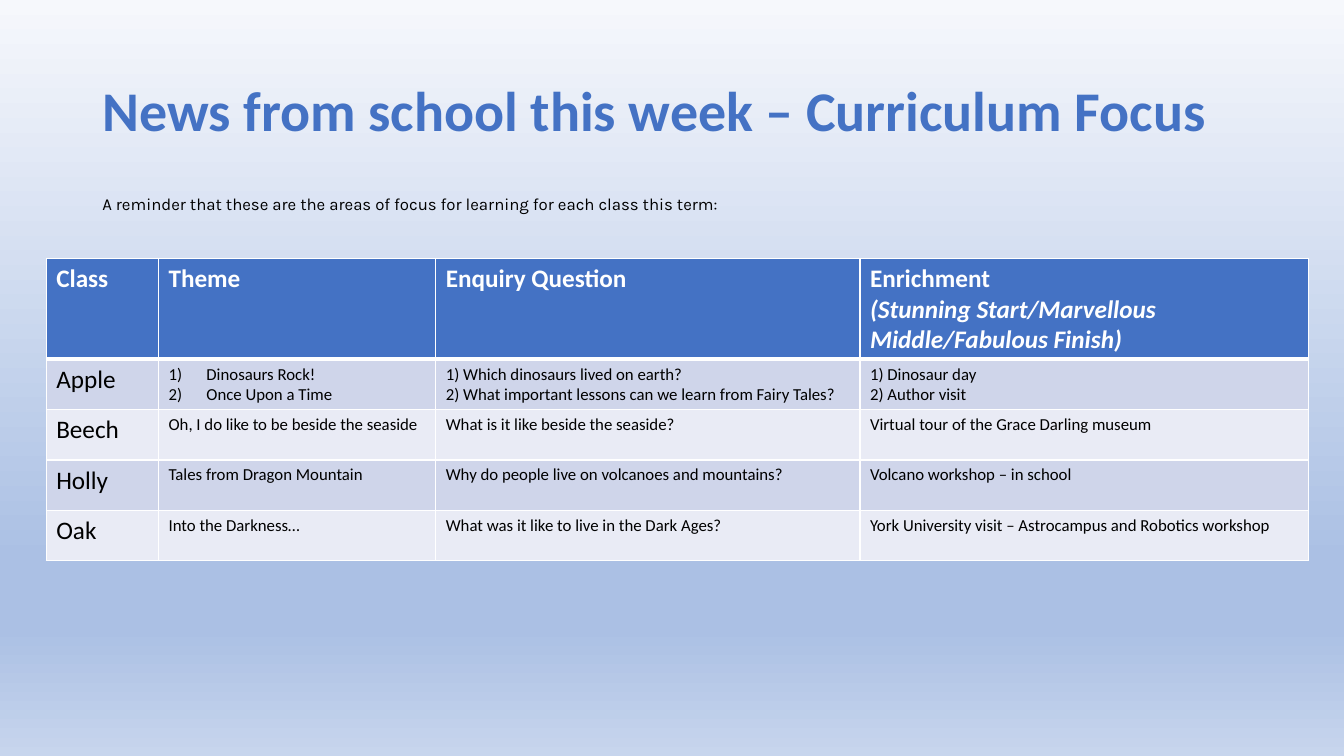
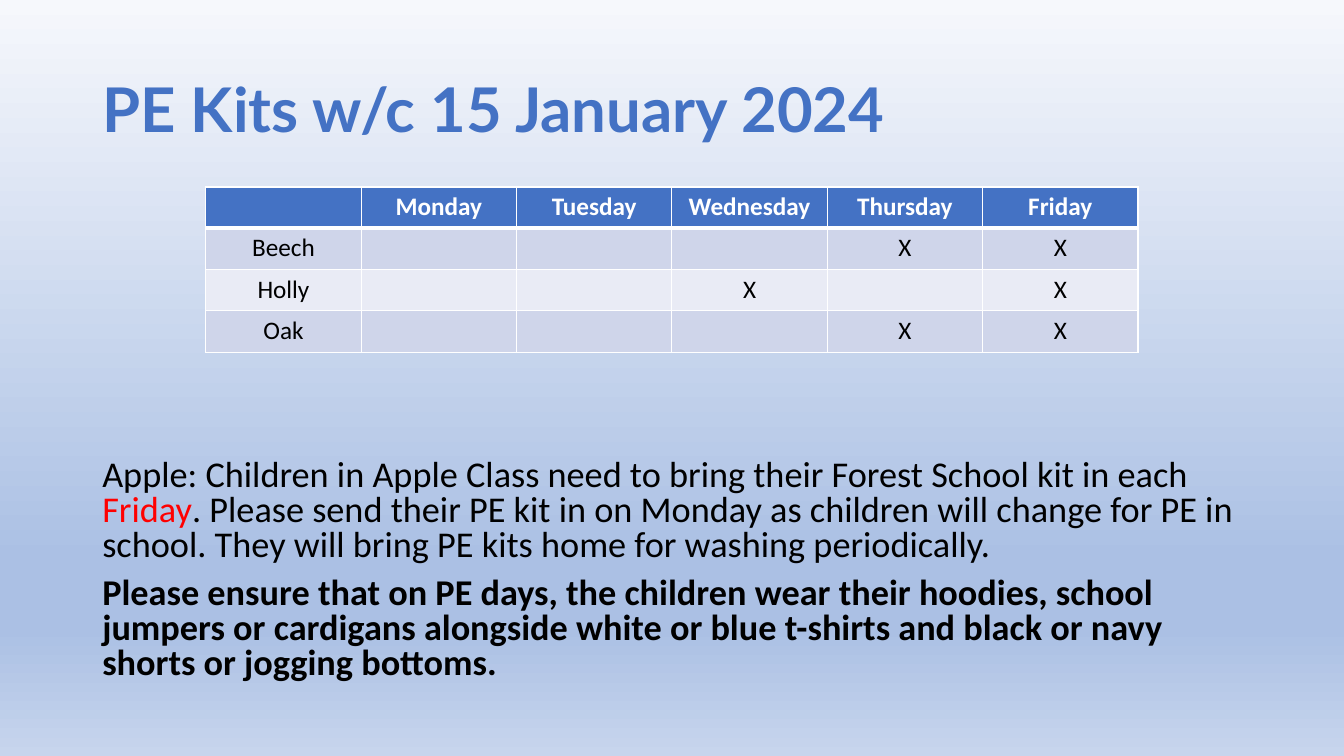
from lxml.etree import SubElement
from pptx import Presentation
from pptx.dml.color import RGBColor
from pptx.enum.text import MSO_ANCHOR as Anchor, MSO_AUTO_SIZE as AutoSize, PP_ALIGN as Align
from pptx.oxml.ns import qn
from pptx.util import Emu, Pt

COLOURS = {
    "accent": "4472C4",
    "text": "000000",
    "alert": "FF0000",
    "white": "FFFFFF",
    "band_dark": "CFD5EA",
    "band_light": "E9EBF5",
    "sky_top": "F6F8FC",
    "sky_deep": "ABC0E4",
    "sky_base": "C7D5ED",
}
SKY = [(0, "sky_top"), (0.74, "sky_deep"), (0.83, "sky_deep"), (1, "sky_base")]
LEFT, WIDTH = 88, 1104


def px(length):
    return Emu(length * 9525)


def colour(name):
    return RGBColor.from_string(COLOURS[name])


class Newsletter:
    def __init__(self):
        self.deck = Presentation()
        self.deck.slide_width, self.deck.slide_height = px(1280), px(720)
        self.page = None
        self.paint_background()

    def paint_background(self):
        master = self.deck.slide_master
        fill = master.background.fill
        fill.gradient()
        fill.gradient_angle = 270
        stop_list = next(master.element.iter(qn("a:gsLst")))
        while len(stop_list) < len(SKY):
            SubElement(stop_list, qn("a:gs"), pos="0")
        for stop, (position, name) in zip(fill.gradient_stops, SKY):
            stop.position = position
            stop.color.rgb = colour(name)

    def style(self, font, size, name="text", bold=False, face="Calibri"):
        font.name, font.size, font.bold = face, Pt(size), bold
        font.color.rgb = colour(name)

    def place(self, shape, left, top, width, height):
        shape.left, shape.top, shape.width, shape.height = map(px, (left, top, width, height))

    def add_page(self, title, size, face):
        self.page = self.deck.slides.add_slide(self.deck.slide_layouts[5])
        box = self.page.shapes.title
        self.place(box, LEFT, 38, WIDTH, 139)
        frame = box.text_frame
        frame.text = title
        frame.auto_size = AutoSize.NONE
        frame.vertical_anchor = Anchor.MIDDLE
        para = frame.paragraphs[0]
        para.alignment, para.line_spacing = Align.LEFT, 0.9
        self.style(para.font, size, "accent", True, face)

    def add_text(self, top, height, paragraphs, size, face="Calibri", spacing=1.0, gap=0):
        box = self.page.shapes.add_textbox(px(LEFT), px(top), px(WIDTH), px(height))
        frame = box.text_frame
        frame.word_wrap = True
        for index, (spans, bold) in enumerate(paragraphs):
            para = frame.add_paragraph() if index else frame.paragraphs[0]
            para.line_spacing = spacing
            para.space_before = Pt(gap if index else 0)
            self.style(para.font, size, "text", bold, face)
            for text, name in spans:
                span = para.add_run()
                span.text = text
                if name != "text":
                    span.font.color.rgb = colour(name)

    def add_table(self, left, top, widths, heights, rows, sizes, align=Align.LEFT):
        frame = self.page.shapes.add_table(
            len(rows), len(widths), px(left), px(top), px(sum(widths)), px(sum(heights)))
        table = frame.table
        for column, width in zip(table.columns, widths):
            column.width = px(width)
        for r, (row, height) in enumerate(zip(rows, heights)):
            table.rows[r].height = px(height)
            for c, text in enumerate(row):
                self.fill_cell(table.cell(r, c), r, text, sizes[c] if r else 18, align)
        return table

    def fill_cell(self, cell, row, text, size, align):
        weights = {"L": 1, "R": 1, "T": 3 if row == 1 else 1, "B": 1 if row else 3}
        properties = cell._tc.get_or_add_tcPr()
        for side, weight in weights.items():
            line = SubElement(properties, qn("a:ln" + side), w=str(Pt(weight)))
            paint = SubElement(line, qn("a:solidFill"))
            SubElement(paint, qn("a:srgbClr"), val=COLOURS["white"])
        cell.fill.solid()
        band = ("band_dark" if row % 2 else "band_light") if row else "accent"
        cell.fill.fore_color.rgb = colour(band)
        if text:
            cell.text = text
            for para in cell.text_frame.paragraphs:
                para.alignment = align
                self.style(para.font, size, "text" if row else "white", not row)

    def number(self, cell):
        for para in cell.text_frame.paragraphs:
            properties = para._p.get_or_add_pPr()
            properties.set("marL", str(px(36)))
            properties.set("indent", str(px(-36)))
            bullet = properties.makeelement(qn("a:buAutoNum"), {"type": "arabicParenR"})
            properties.insert_element_before(bullet, "a:tabLst", "a:defRPr", "a:extLst")


def build_curriculum(news):
    news.add_page("News from school this week – Curriculum Focus", 40, "Calibri")
    reminder = "A reminder that these are the areas of focus for learning for each class this term:"
    news.add_text(180, 30, [([(reminder, "text")], False)], 12, "Karla")
    rows = [
        ("Class", "Theme", "Enquiry Question",
         "Enrichment\n(Stunning Start/Marvellous Middle/Fabulous Finish)"),
        ("Apple", "Dinosaurs Rock!\nOnce Upon a Time",
         "1) Which dinosaurs lived on earth?\n"
         "2) What important lessons can we learn from Fairy Tales?",
         "1) Dinosaur day\n2) Author visit"),
        ("Beech", "Oh, I do like to be beside the seaside",
         "What is it like beside the seaside?", "Virtual tour of the Grace Darling museum"),
        ("Holly", "Tales from Dragon Mountain",
         "Why do people live on volcanoes and mountains?", "Volcano workshop – in school"),
        ("Oak", "Into the Darkness…", "What was it like to live in the Dark Ages?",
         "York University visit – Astrocampus and Robotics workshop"),
    ]
    table = news.add_table(44, 246, [107, 264, 404, 427], [96] + [48] * 4, rows, [18, 12, 12, 12])
    table.cell(0, 3).text_frame.paragraphs[1].font.italic = True
    news.number(table.cell(1, 1))


def build_kits(news):
    news.add_page("PE Kits w/c 15 January 2024", 44, "Lato")
    days = ["Monday", "Tuesday", "Wednesday", "Thursday", "Friday"]
    kit_days = {
        "Beech": ("Thursday", "Friday"),
        "Holly": ("Wednesday", "Friday"),
        "Oak": ("Thursday", "Friday"),
    }
    rows = [[""] + days]
    rows += [[name] + ["X" if day in chosen else "" for day in days]
             for name, chosen in kit_days.items()]
    news.add_table(196, 178, [148] * 6, [39, 40, 39, 40], rows, [18] * 6, Align.CENTER)
    apple = [
        ("Apple: Children in Apple Class need to bring their Forest School kit in each ", "text"),
        ("Friday", "alert"),
        (". Please send their PE kit in on Monday as children will change for PE in school. "
         "They will bring PE kits home for washing periodically.", "text"),
    ]
    clothing = [
        ("Please ensure that on PE days, the children wear their hoodies, school jumpers or "
         "cardigans alongside white or blue t-shirts and black or navy shorts or jogging bottoms.",
         "text"),
    ]
    news.add_text(433, 215, [(apple, False), (clothing, True)], 25.9, spacing=0.8, gap=10)


def main():
    news = Newsletter()
    build_curriculum(news)
    build_kits(news)
    news.deck.save("out.pptx")


if __name__ == "__main__":
    main()
